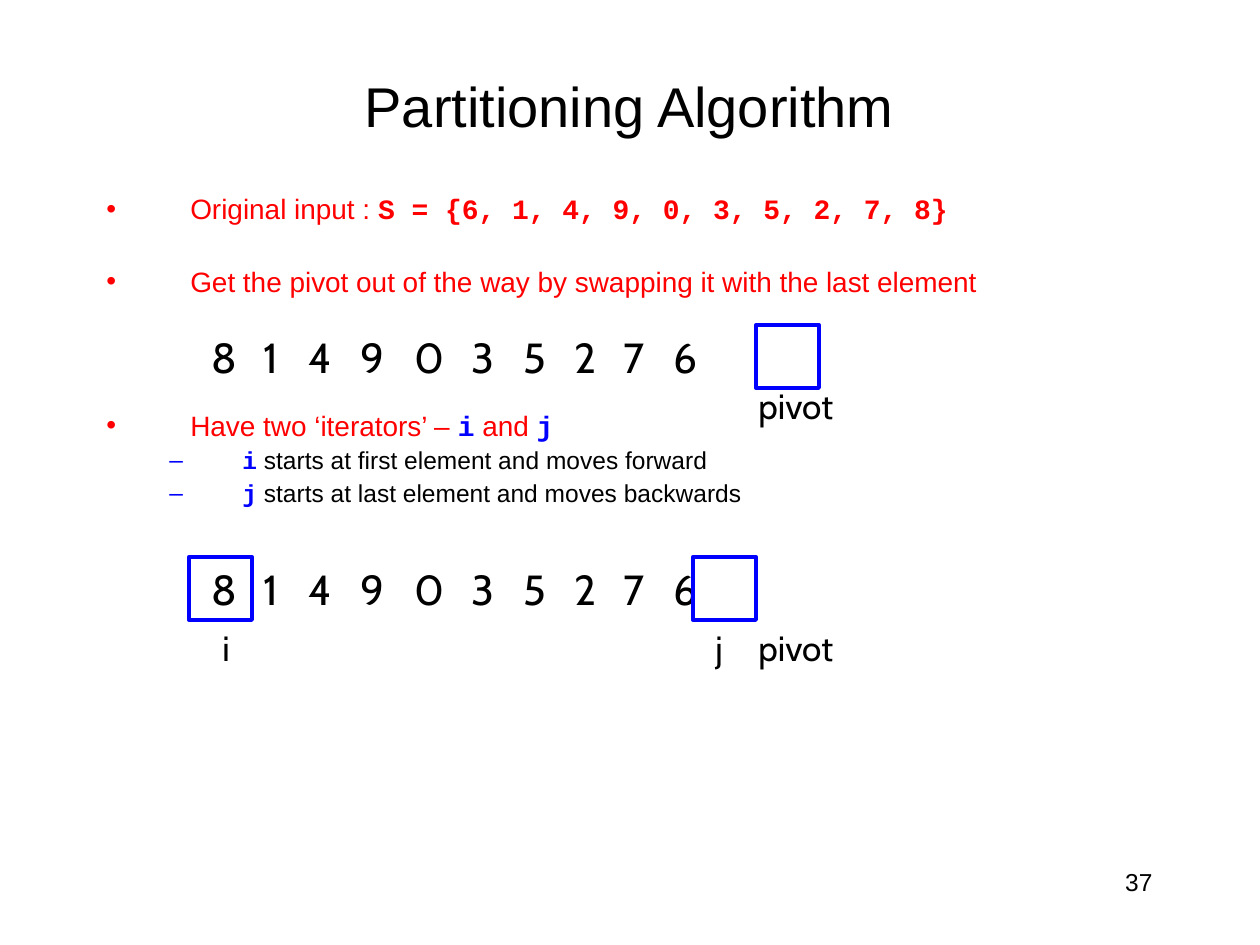
from lxml import etree
from pptx import Presentation
from pptx.dml.color import RGBColor
from pptx.enum.shapes import MSO_SHAPE
from pptx.enum.text import MSO_ANCHOR, MSO_AUTO_SIZE, PP_ALIGN
from pptx.oxml.ns import qn
from pptx.util import Pt

RECT = MSO_SHAPE.RECTANGLE
MIDDLE = MSO_ANCHOR.MIDDLE
FIT, NO_FIT = MSO_AUTO_SIZE.SHAPE_TO_FIT_TEXT, MSO_AUTO_SIZE.NONE
LEFT, CENTER, RIGHT = PP_ALIGN.LEFT, PP_ALIGN.CENTER, PP_ALIGN.RIGHT
TITLE_ONLY = 5
COLORS = {"text": "000000", "point": "FF0000", "mark": "0000FF"}
SANS, CODE, DIAGRAM = "Arial", "Courier New", "Cabin"


def px(n):
    return round(n * 914400 / 126)


class Deck:
    """Holds the text style and the current slide."""

    def __init__(self, width, height):
        self.prs = Presentation()
        self.prs.slide_width, self.prs.slide_height = px(width), px(height)
        self.s = self.prs.slides.add_slide(self.prs.slide_layouts[TITLE_ONLY])

    def run(self, p, text, size, font=SANS, color="text", bold=False):
        r = p.add_run()
        r.text = text
        r.font.size, r.font.name, r.font.bold = Pt(size), font, bold
        r.font.color.rgb = RGBColor.from_string(COLORS[color])

    def title(self, x, y, w, h, text):
        sp = self.s.shapes.title
        sp.left, sp.top, sp.width, sp.height = px(x), px(y), px(w), px(h)
        tf = sp.text_frame
        tf.vertical_anchor, tf.auto_size = MIDDLE, NO_FIT
        p = tf.paragraphs[0]
        p.alignment = CENTER
        self.run(p, text, 32)

    def box(self, x, y, w, h, wrap=True):
        tf = self.s.shapes.add_textbox(px(x), px(y), px(w), px(h)).text_frame
        tf.word_wrap = wrap
        tf.auto_size = NO_FIT if wrap else FIT
        return tf

    def label(self, x, y, w, h, text, size=20, font=DIAGRAM, align=LEFT):
        p = self.box(x, y, w, h, wrap=False).paragraphs[0]
        p.alignment = align
        self.run(p, text, size, font)

    def bullets(self, x, y, w, h, items):
        tf = self.box(x, y, w, h)
        for n, (level, before, runs) in enumerate(items):
            p = tf.add_paragraph() if n else tf.paragraphs[0]
            char, margin, hang, size = (("•", 84, 84, 16), ("–", 136, 73, 14))[level]
            p.level, p.line_spacing, p.space_before = level, 0.9, Pt(before)
            pPr = p._p.get_or_add_pPr()
            pPr.set("marL", str(px(margin)))
            pPr.set("indent", str(-px(hang)))
            etree.SubElement(pPr, qn("a:buFont")).set("typeface", SANS)
            etree.SubElement(pPr, qn("a:buChar")).set("char", char)
            for text, font, color in runs:
                self.run(p, text, size, font, color, bold=font == CODE)

    def array(self, x, y, w, h, values, stops):
        p = self.box(x, y, w, h).paragraphs[0]
        tabs = etree.SubElement(p._p.get_or_add_pPr(), qn("a:tabLst"))
        for stop in stops:
            tab = etree.SubElement(tabs, qn("a:tab"))
            tab.set("pos", str(px(stop)))
            tab.set("algn", "l")
        self.run(p, "\t".join(values), 24, DIAGRAM)

    def marker(self, x, y, side=63):
        sp = self.s.shapes.add_shape(RECT, px(x), px(y), px(side), px(side))
        sp.shadow.inherit = False
        sp.fill.background()
        sp.line.color.rgb = RGBColor.from_string(COLORS["mark"])
        sp.line.width = Pt(2.25)


def main():
    deck = Deck(1260, 945)
    deck.title(94, 53, 1071, 105, "Partitioning Algorithm")
    deck.label(903, 861, 262, 63, "37", 14, SANS, RIGHT)

    # Steps: level, space before in points, runs
    i, j = ("i", CODE, "mark"), ("j", CODE, "mark")
    deck.bullets(94, 189, 1071, 495, [
        (0, 0, [("Original input : ", SANS, "point"),
                ("S = {6, 1, 4, 9, 0, 3, 5, 2, 7, 8}", CODE, "point")]),
        (0, 24.3, [("Get the pivot out of the way by swapping it "
                    "with the last element", SANS, "point")]),
        (0, 65.1, [("Have two ‘iterators’ – ", SANS, "point"), i,
                   (" and ", SANS, "point"), j]),
        (1, 3.5, [i, (" starts at first element and moves forward", SANS, "text")]),
        (1, 3.5, [j, (" starts at last element and moves backwards", SANS, "text")]),
    ])

    # Array after the swap, then with both iterators
    stops = (52, 97, 149, 203, 260, 312, 363, 412, 462)
    for top, label_top in ((325, 378), (557, 620)):
        deck.array(199, top, 610, 63, "8149035276", stops)
        deck.label(746, label_top, 101, 54, "pivot")

    # Pivot and iterator markers
    deck.marker(756, 325)
    for name, x, label_x in (("i", 189, 210), ("j", 693, 703)):
        deck.marker(x, 557)
        deck.label(label_x, 620, 35, 54, name)

    deck.prs.save("out.pptx")


if __name__ == "__main__":
    main()
